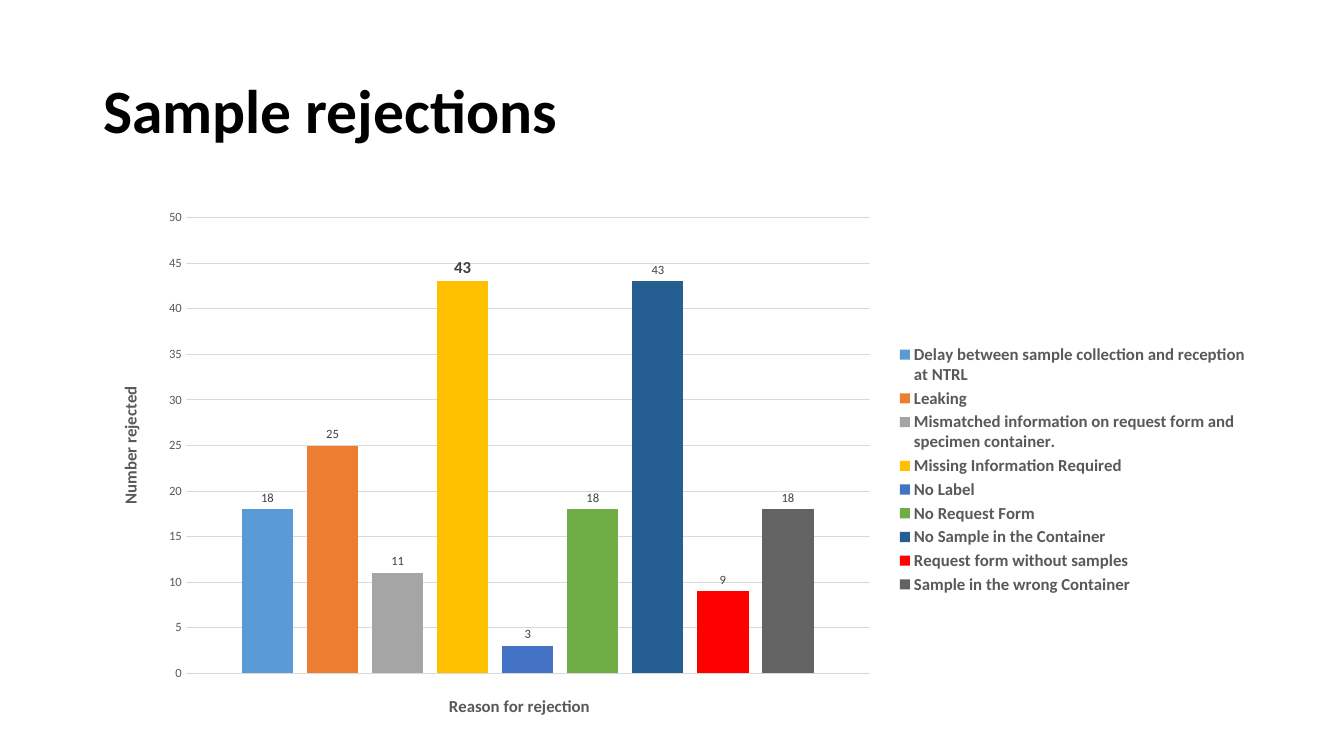
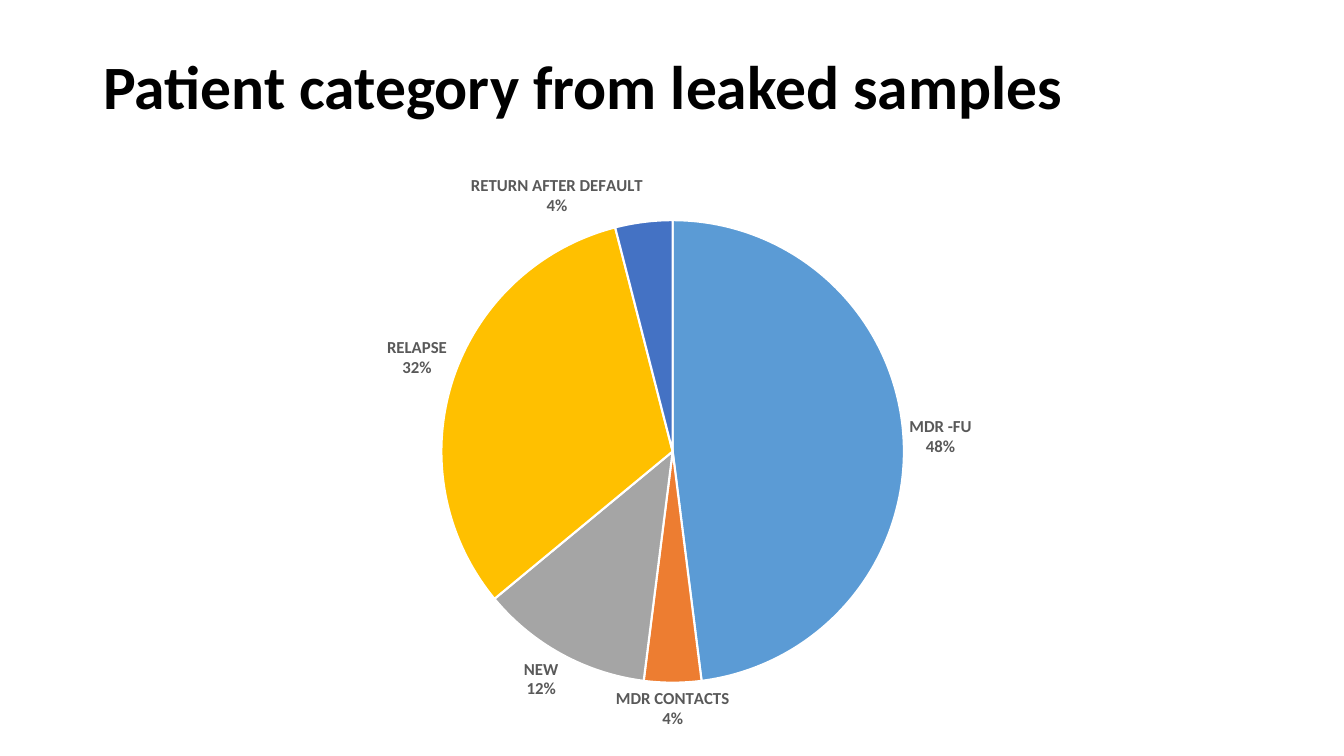
import pptx
import pptx.util
import pptx.chart.data
import pptx.dml.color
import pptx.enum.chart
import pptx.enum.text
import pptx.oxml
import pptx.oxml.ns
from dataclasses import dataclass

Pt = pptx.util.Pt
qn = pptx.oxml.ns.qn

REJECTIONS = [
    ("Delay between sample collection and reception at NTRL", 18, "5B9BD5"),
    ("Leaking", 25, "ED7D31"),
    ("Mismatched information on request form and specimen container.", 11, "A5A5A5"),
    ("Missing Information Required", 43, "FFC000"),
    ("No Label", 3, "4472C4"),
    ("No Request Form", 18, "70AD47"),
    ("No Sample in the Container", 43, "255E91"),
    ("Request form without samples", 9, "FF0000"),
    ("Sample in the wrong Container", 18, "636363"),
]
EMPHASISED = "Missing Information Required"

PATIENT_CATEGORIES = [
    ("MDR -FU", 48, "5B9BD5"),
    ("MDR CONTACTS", 4, "ED7D31"),
    ("NEW", 12, "A5A5A5"),
    ("RELAPSE", 32, "FFC000"),
    ("RETURN AFTER DEFAULT", 4, "4472C4"),
]


@dataclass(frozen=True)
class Theme:
    font: str = "Calibri"
    title: str = "000000"
    muted: str = "595959"
    value: str = "404040"
    grid: str = "D9D9D9"
    paper: str = "FFFFFF"
    title_size: int = 44
    strong_size: int = 12
    base_size: int = 10
    small_size: int = 9


THEME = Theme()
CONTENT_LEFT, CONTENT_WIDTH, TITLE_HEIGHT = 66.5, 828, 104.4


def rgb(color):
    return pptx.dml.color.RGBColor.from_string(color)


def set_font(font, size, color, bold=False):
    font.name = THEME.font
    font.size = Pt(size)
    font.bold = bold
    font.color.rgb = rgb(color)


def fill_solid(part, color):
    part.format.fill.solid()
    part.format.fill.fore_color.rgb = rgb(color)


def add_titled_slide(deck, heading, top):
    slide = deck.slides.add_slide(deck.slide_layouts[5])
    title = slide.shapes.title
    title.left, title.top = Pt(CONTENT_LEFT), Pt(top)
    title.width, title.height = Pt(CONTENT_WIDTH), Pt(TITLE_HEIGHT)
    frame = title.text_frame
    frame.text = heading
    frame.word_wrap = True
    frame.vertical_anchor = pptx.enum.text.MSO_ANCHOR.MIDDLE
    paragraph = frame.paragraphs[0]
    paragraph.alignment = pptx.enum.text.PP_ALIGN.LEFT
    paragraph.line_spacing = 0.9
    set_font(paragraph.font, THEME.title_size, THEME.title, True)
    return slide


def add_chart(slide, kind, data, top, height):
    chart = slide.shapes.add_chart(
        kind, Pt(CONTENT_LEFT), Pt(top), Pt(CONTENT_WIDTH), Pt(height), data).chart
    chart.has_title = False
    set_font(chart.font, THEME.base_size, THEME.title)
    return chart


def place_in_chart(part, index, fractions, inner=False):
    for old in part.findall(qn("c:layout")):
        part.remove(old)
    layout = pptx.oxml.parse_xml(
        f'<c:layout {pptx.oxml.ns.nsdecls("c")}><c:manualLayout/></c:layout>')
    settings = [("layoutTarget", "inner")] if inner else []
    settings += [("xMode", "edge"), ("yMode", "edge")]
    settings += zip("xywh", fractions)
    for tag, setting in settings:
        entry = layout[0].makeelement(qn(f"c:{tag}"), {"val": str(setting)})
        layout[0].append(entry)
    part.insert(index, layout)


def place_plot(chart, fractions):
    place_in_chart(next(chart.element.iter(qn("c:plotArea"))), 0, fractions, True)


def title_axis(axis, text):
    axis.has_title = True
    frame = axis.axis_title.text_frame
    frame.text = text
    set_font(frame.paragraphs[0].font, THEME.strong_size, THEME.muted, True)
    return frame


def build_rejections(deck):
    slide = add_titled_slide(deck, "Sample rejections", 29)
    data = pptx.chart.data.CategoryChartData()
    data.categories = ["1"]
    for reason, count, _ in REJECTIONS:
        data.add_series(reason, [count])
    chart = add_chart(
        slide, pptx.enum.chart.XL_CHART_TYPE.COLUMN_CLUSTERED, data, 144, 383)
    place_plot(chart, (0.08, 0.03, 0.59, 0.85))

    plot = chart.plots[0]
    plot.gap_width, plot.overlap = 219, -27
    plot.vary_by_categories = False
    for series, (reason, _, color) in zip(plot.series, REJECTIONS):
        fill_solid(series, color)
        labels = series.data_labels
        labels.show_value = True
        labels.position = pptx.enum.chart.XL_LABEL_POSITION.OUTSIDE_END
        strong = reason == EMPHASISED
        size = THEME.strong_size if strong else THEME.small_size
        set_font(labels.font, size, THEME.value, strong)

    title_axis(chart.category_axis, "Reason for rejection")
    chart.category_axis.visible = False
    counts = chart.value_axis
    count_title = title_axis(counts, "Number rejected")
    count_title._txBody.bodyPr.set("rot", "-5400000")
    counts.minimum_scale, counts.maximum_scale, counts.major_unit = 0, 50, 5
    counts.major_tick_mark = pptx.enum.chart.XL_TICK_MARK.NONE
    counts.format.line.fill.background()
    set_font(counts.tick_labels.font, THEME.small_size, THEME.muted)
    counts.has_major_gridlines = True
    grid = counts.major_gridlines.format.line
    grid.color.rgb = rgb(THEME.grid)
    grid.width = Pt(0.75)

    chart.has_legend = True
    legend = chart.legend
    legend.position = pptx.enum.chart.XL_LEGEND_POSITION.RIGHT
    legend.include_in_layout = False
    set_font(legend.font, THEME.strong_size, THEME.muted, True)
    place_in_chart(next(chart.element.iter(qn("c:legend"))), 1, (0.69, 0.26, 0.31, 0.48))


def build_patient_categories(deck):
    slide = add_titled_slide(deck, "Patient category from leaked samples", 11.5)
    names, shares, colors = zip(*PATIENT_CATEGORIES)
    data = pptx.chart.data.CategoryChartData()
    data.categories = names
    data.add_series("Series 1", shares)
    chart = add_chart(slide, pptx.enum.chart.XL_CHART_TYPE.PIE, data, 116, 413)
    chart.has_legend = False
    place_plot(chart, (0.3, 0.1, 0.4, 0.8))

    plot = chart.plots[0]
    plot.vary_by_categories = True
    series = plot.series[0]
    for index, color in enumerate(colors):
        wedge = series.points[index]
        fill_solid(wedge, color)
        wedge.format.line.color.rgb = rgb(THEME.paper)
        wedge.format.line.width = Pt(1.5)

    labels = series.data_labels
    labels.show_value = False
    labels.show_category_name = True
    labels.show_percentage = True
    labels.number_format = "0%"
    labels.number_format_is_linked = False
    labels.position = pptx.enum.chart.XL_LABEL_POSITION.OUTSIDE_END
    set_font(labels.font, THEME.strong_size, THEME.muted, True)
    bubble_flag = next(chart.element.iter(qn("c:showBubbleSize")))
    separator = bubble_flag.makeelement(qn("c:separator"), {})
    separator.text = "\n"
    bubble_flag.addnext(separator)


def main():
    deck = pptx.Presentation()
    deck.slide_width, deck.slide_height = Pt(960), Pt(540)
    build_rejections(deck)
    build_patient_categories(deck)
    deck.save("out.pptx")


if __name__ == "__main__":
    main()
